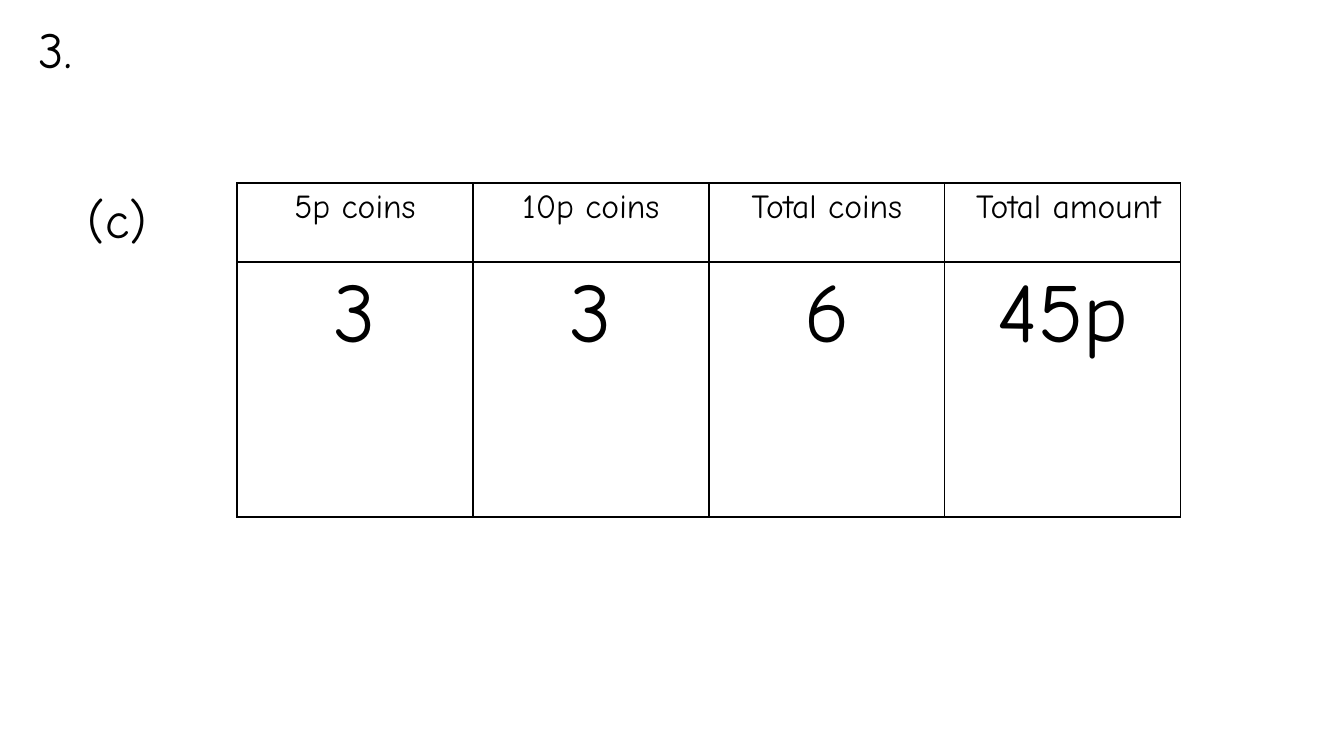
from dataclasses import dataclass

from lxml.etree import SubElement
from pptx import Presentation
from pptx.dml.color import RGBColor
from pptx.enum.text import MSO_AUTO_SIZE, PP_ALIGN
from pptx.oxml.ns import qn
from pptx.util import Emu, Pt


@dataclass(frozen=True)
class Theme:
    """Colours, font and type sizes of the slide."""
    ink: str = "000000"
    paper: str = "FFFFFF"
    font: str = "Comic Neue"
    label: int = 36
    header: int = 24
    answer: int = 60
    rule: int = 1


THEME = Theme()
COINS = (
    ("5p coins", "10p coins", "Total coins", " Total amount"),
    ("3", "3", "6", "45p"),
)


def px(n):
    """Turn slide pixels into EMU."""
    return Emu(round(n * 914400 / 100.8))


def style(p, size):
    """Apply the theme font to a paragraph."""
    p.font.name = THEME.font
    p.font.size = Pt(size)
    p.font.color.rgb = RGBColor.from_string(THEME.ink)


def add_label(s, text, x, y, w, h):
    """Place a question label in the given box."""
    tf = s.shapes.add_textbox(px(x), px(y), px(w), px(h)).text_frame
    tf.word_wrap = True
    tf.auto_size = MSO_AUTO_SIZE.SHAPE_TO_FIT_TEXT
    p = tf.paragraphs[0]
    p.text = text
    style(p, THEME.label)


def add_borders(cell):
    """Draw a thin line on each side of a cell."""
    tc_pr = cell._tc.get_or_add_tcPr()
    for i, side in enumerate(("a:lnL", "a:lnR", "a:lnT", "a:lnB")):
        ln = tc_pr.makeelement(qn(side), {"w": str(Pt(THEME.rule))})
        fill = SubElement(ln, qn("a:solidFill"))
        SubElement(fill, qn("a:srgbClr"), val=THEME.ink)
        tc_pr.insert(i, ln)


def add_coin_table(s, x, y, w, h, header_h):
    """Place the coin table with equal columns in the given box."""
    table = s.shapes.add_table(
        len(COINS), len(COINS[0]), px(x), px(y), px(w), px(h)).table
    table.first_row = table.horz_banding = False
    for col in table.columns:
        col.width = px(w / len(COINS[0]))
    heights = (header_h, h - header_h)
    sizes = (THEME.header, THEME.answer)
    for i, (texts, height, size) in enumerate(zip(COINS, heights, sizes)):
        table.rows[i].height = px(height)
        for j, text in enumerate(texts):
            cell = table.cell(i, j)
            cell.fill.background()
            add_borders(cell)
            p = cell.text_frame.paragraphs[0]
            p.text = text
            p.alignment = PP_ALIGN.CENTER
            style(p, size)


def add_coin_slide(prs):
    """Build the coin question slide."""
    s = prs.slides.add_slide(prs.slide_layouts[6])
    s.background.fill.solid()
    s.background.fill.fore_color.rgb = RGBColor.from_string(THEME.paper)
    add_label(s, "3.", 29, 13, 90, 72)
    add_coin_table(s, 237, 183, 944, 334, 79)
    add_label(s, "(c)", 78, 183, 100, 72)


def main():
    """Create and save the presentation."""
    prs = Presentation()
    prs.slide_width, prs.slide_height = px(1344), px(756)
    add_coin_slide(prs)
    prs.save("out.pptx")


if __name__ == "__main__":
    main()
